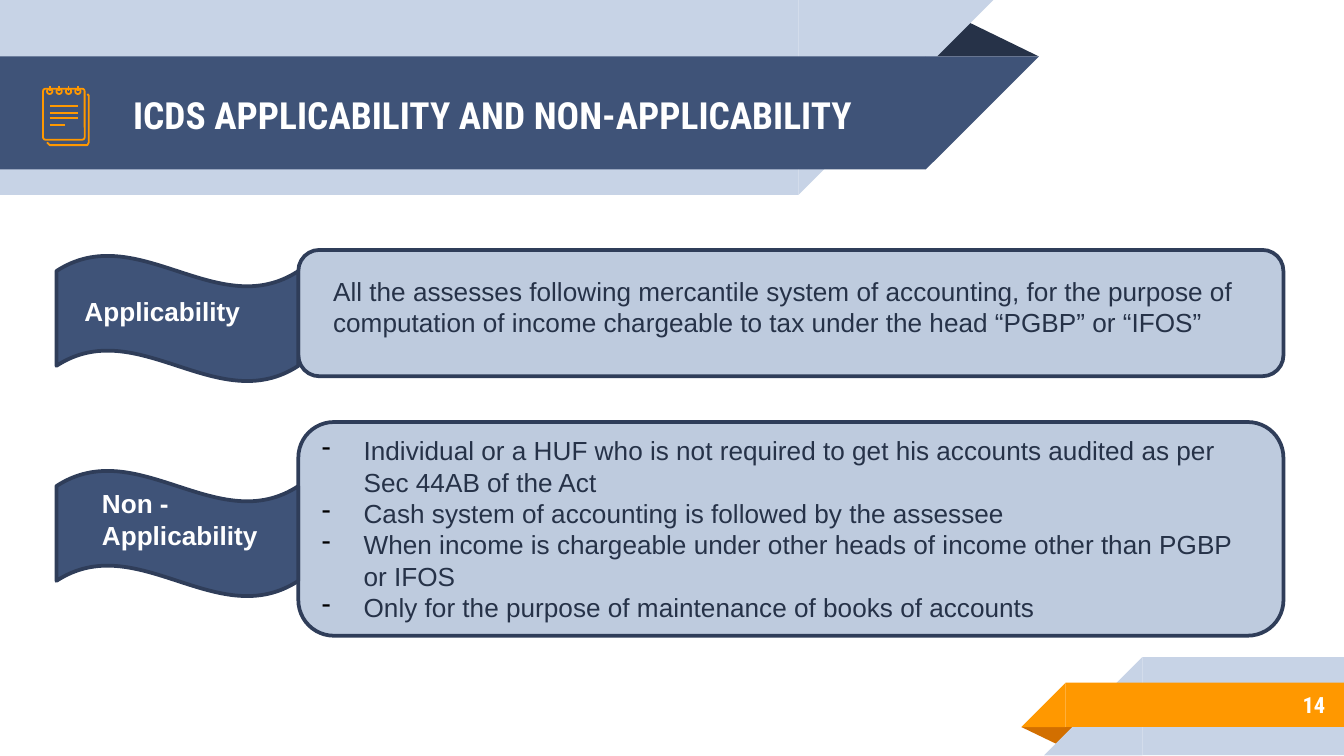
from dataclasses import dataclass

from lxml import etree
from pptx import Presentation
from pptx import util as u
from pptx.dml.color import RGBColor
from pptx.enum import shapes, text
from pptx.oxml import ns

PALE = RGBColor(0xC7, 0xD3, 0xE6)
PANEL = RGBColor(0xBE, 0xCB, 0xDE)
BLUE = RGBColor(0x3F, 0x53, 0x78)
OUTLINE = RGBColor(0x2F, 0x3D, 0x59)
DARK = RGBColor(0x26, 0x32, 0x48)
ORANGE = RGBColor(0xFF, 0x98, 0x00)
RUST = RGBColor(0xD2, 0x6F, 0x00)
WHITE = RGBColor(0xFF, 0xFF, 0xFF)
ICON_WIDTH = 0.96
KIND = shapes.MSO_SHAPE

HEADING = {"name": "Roboto Condensed", "bold": True}
LABEL = {"name": "Arial", "size": u.Pt(14), "bold": True}
BODY = {"name": "Arial", "size": u.Pt(14), "bold": False}


@dataclass(frozen=True)
class Area:
    left: float
    top: float
    width: float
    height: float

    def lengths(self) -> list:
        return [u.Inches(n) for n in (self.left, self.top, self.width, self.height)]


@dataclass(frozen=True)
class Ribbon:
    """A bar whose slanted end is a right triangle as wide as it is high."""
    bar: Area
    color: RGBColor
    points_right: bool


@dataclass(frozen=True)
class Topic:
    panel: Area
    wave: Area
    label: Area
    lines: tuple


def add_shape(page, kind, area: Area, fill=None, line=None, width: float = 2):
    shape = page.shapes.add_shape(kind, *area.lengths())
    style_shape(shape, fill, line, width)
    return shape


def style_shape(shape, fill, line, width: float) -> None:
    shape.shadow.inherit = False
    if fill is None:
        shape.fill.background()
    else:
        shape.fill.solid()
        shape.fill.fore_color.rgb = fill
    if line is None:
        shape.line.fill.background()
    else:
        shape.line.color.rgb = line
        shape.line.width = u.Pt(width)


def add_ribbon(page, ribbon: Ribbon) -> None:
    bar = ribbon.bar
    add_shape(page, KIND.RECTANGLE, bar, ribbon.color)
    left = bar.left + bar.width if ribbon.points_right else bar.left - bar.height
    end = add_shape(page, KIND.RIGHT_TRIANGLE,
                    Area(left, bar.top, bar.height, bar.height), ribbon.color)
    end.element.spPr.xfrm.set("flipH", "1")
    end.rotation = 180 if ribbon.points_right else 0


def add_fold(page, area: Area, color: RGBColor, rotation: int) -> None:
    fold = add_shape(page, KIND.ISOSCELES_TRIANGLE, area, color)
    fold.adjustments[0] = 0.324
    fold.rotation = rotation


def add_line(page, x1: float, y1: float, x2: float, y2: float) -> None:
    line = page.shapes.add_connector(shapes.MSO_CONNECTOR.STRAIGHT,
                                     *[u.Inches(n) for n in (x1, y1, x2, y2)])
    line.line.color.rgb = ORANGE
    line.line.width = u.Pt(ICON_WIDTH)
    etree.SubElement(line.element.spPr, ns.qn("a:effectLst"))


def write(box, lines, color: RGBColor, font: dict, align=text.PP_ALIGN.LEFT,
          anchor=text.MSO_ANCHOR.TOP, inset: float = 0.05) -> None:
    frame = box.text_frame
    frame_format = {
        "word_wrap": True, "auto_size": text.MSO_AUTO_SIZE.NONE,
        "vertical_anchor": anchor,
        "margin_left": u.Inches(0.1), "margin_right": u.Inches(0.1),
        "margin_top": u.Inches(inset), "margin_bottom": u.Inches(inset),
    }
    for name, value in frame_format.items():
        setattr(frame, name, value)
    for index, line in enumerate(lines):
        para = frame.add_paragraph() if index else frame.paragraphs[0]
        para.alignment = align
        span = para.add_run()
        span.text = line
        for name, value in font.items():
            setattr(span.font, name, value)
        span.font.color.rgb = color


def add_text(page, area: Area, lines, color: RGBColor, font: dict, **layout) -> None:
    write(page.shapes.add_textbox(*area.lengths()), lines, color, font, **layout)


def add_dash(para) -> None:
    props = para._p.get_or_add_pPr()
    props.set("marL", str(u.Inches(0.31)))
    props.set("indent", str(-u.Inches(0.31)))
    color = etree.SubElement(props, ns.qn("a:buClr"))
    etree.SubElement(color, ns.qn("a:srgbClr"), val="000000")
    etree.SubElement(props, ns.qn("a:buChar"), char="-")


def add_notepad(page) -> None:
    # Back sheet shows only below and to the right of the front one
    corners = [(0.35, 1.06), (0.37, 1.08), (0.65, 1.08),
               (0.66, 1.06), (0.66, 0.71), (0.65, 0.7)]
    points = [(u.Inches(x), u.Inches(y)) for x, y in corners]
    builder = page.shapes.build_freeform(*points[0])
    builder.add_line_segments(points[1:], close=False)
    style_shape(builder.convert_to_shape(), None, ORANGE, ICON_WIDTH)
    front = add_shape(page, KIND.ROUNDED_RECTANGLE, Area(0.32, 0.66, 0.31, 0.38),
                      line=ORANGE, width=ICON_WIDTH)
    front.adjustments[0] = 0.06
    # Binding rings, then written lines
    for index in range(4):
        x = 0.37 + 0.07 * index
        add_shape(page, KIND.OVAL, Area(x - 0.02, 0.66, 0.04, 0.04),
                  line=ORANGE, width=ICON_WIDTH)
        add_line(page, x, 0.64, x, 0.68)
    for y, right in ((0.79, 0.58), (0.84, 0.58), (0.88, 0.58), (0.93, 0.48)):
        add_line(page, 0.37, y, right, y)


RIBBONS_TOP = (Ribbon(Area(0, 0, 5.94, 1.45), PALE, True),
               Ribbon(Area(0, 0.42, 6.89, 0.84), BLUE, True))
RIBBONS_BOTTOM = (Ribbon(Area(8.5, 4.89, 1.5, 0.73), PALE, False),
                  Ribbon(Area(7.93, 5.08, 2.07, 0.33), ORANGE, False))
TOPICS = (
    Topic(Area(2.22, 1.86, 7.33, 0.94), Area(0.42, 1.9, 1.8, 0.94),
          Area(0.53, 2.15, 1.45, 0.34), ("Applicability",)),
    Topic(Area(2.22, 3.14, 7.33, 1.59), Area(0.42, 3.5, 1.8, 0.94),
          Area(0.66, 3.58, 1.45, 0.57), ("Non -", "Applicability")),
)
APPLIES = (
    "All the assesses following mercantile system of accounting, for the purpose of",
    "computation of income chargeable to tax under the head “PGBP” or “IFOS”",
)
EXEMPT = (
    "Individual or a HUF who is not required to get his accounts audited as per "
    "Sec 44AB of the Act",
    "Cash system of accounting is followed by the assessee",
    "When income is chargeable under other heads of income other than PGBP or IFOS",
    "Only for the purpose of maintenance of books of accounts",
)


def main() -> None:
    # Widescreen page, 16 to 9
    deck = Presentation()
    deck.slide_width = u.Inches(10)
    deck.slide_height = u.Inches(10 * 9 / 16)
    page = deck.slides.add_slide(deck.slide_layouts[5])
    middle = text.MSO_ANCHOR.MIDDLE

    # Header and footer ribbons
    add_fold(page, Area(6.88, 0.14, 0.85, 0.28), DARK, 0)
    for ribbon in RIBBONS_TOP:
        add_ribbon(page, ribbon)
    add_fold(page, Area(7.6, 5.41, 0.43, 0.14), RUST, 180)
    for ribbon in RIBBONS_BOTTOM:
        add_ribbon(page, ribbon)

    # Title, raised above the ribbons, and page number
    title = page.shapes.title
    title.left, title.top, title.width, title.height = Area(0.89, 0.43, 5.75, 0.84).lengths()
    page.shapes.element.append(title.element)
    write(title, ["ICDS APPLICABILITY AND NON-APPLICABILITY"], WHITE,
          HEADING | {"size": u.Pt(20)}, anchor=middle, inset=0.1)
    add_text(page, Area(8.33, 5.07, 1.63, 0.35), ["14"], WHITE,
             HEADING | {"size": u.Pt(12)}, align=text.PP_ALIGN.RIGHT,
             anchor=middle, inset=0.1)
    add_notepad(page)

    # Topics: panel, wave and label
    panels = []
    for topic in TOPICS:
        panels.append(add_shape(page, KIND.ROUNDED_RECTANGLE, topic.panel, PANEL, OUTLINE))
        add_shape(page, KIND.WAVE, topic.wave, BLUE, OUTLINE)
        add_text(page, topic.label, topic.lines, WHITE, LABEL)

    # Panel texts
    add_text(page, Area(2.38, 2, 7.02, 0.57), APPLIES, DARK, BODY)
    write(panels[1], EXEMPT, DARK, BODY, anchor=middle)
    for para in panels[1].text_frame.paragraphs:
        add_dash(para)

    deck.save("out.pptx")


if __name__ == "__main__":
    main()
